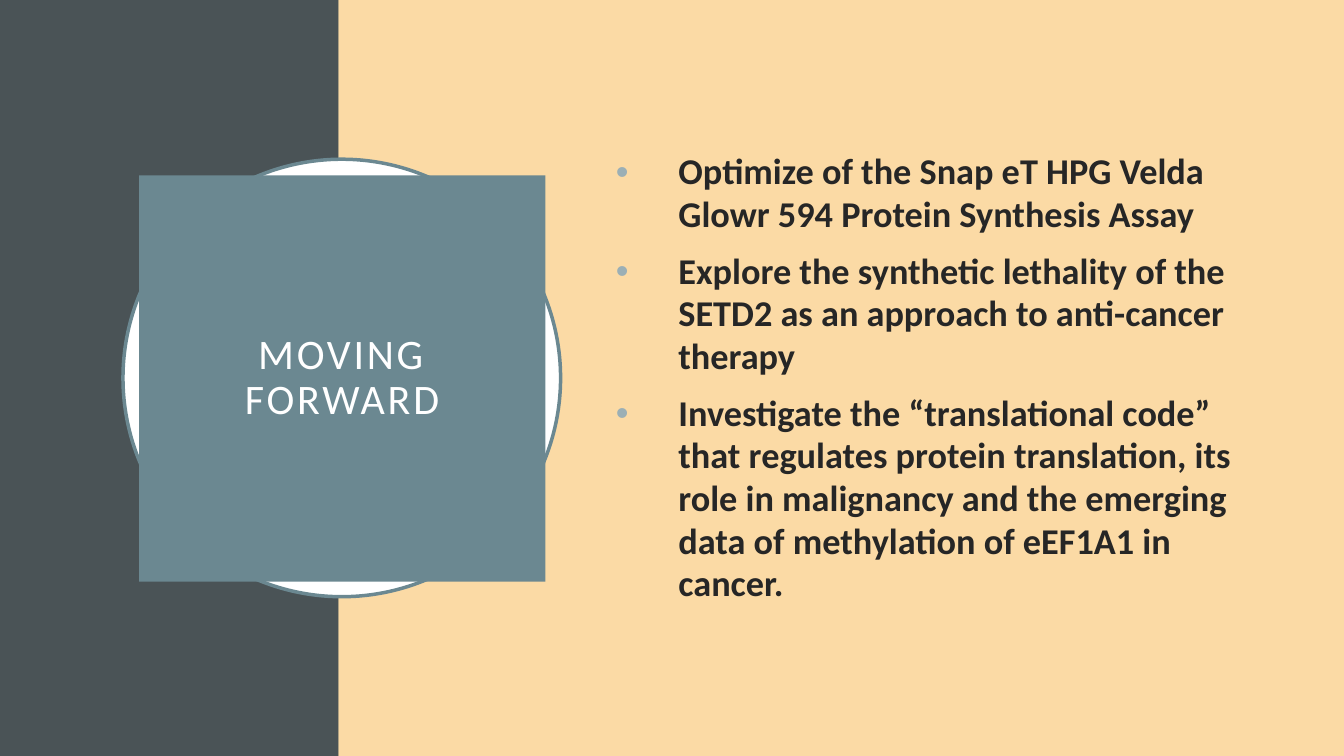
import pptx
import pptx.util
import pptx.dml.color
import pptx.enum.shapes
import pptx.enum.text
from dataclasses import dataclass
from lxml import etree
from pptx.oxml.ns import qn

Inches = pptx.util.Inches
Pt = pptx.util.Pt
Shape = pptx.enum.shapes.MSO_SHAPE
Align = pptx.enum.text.PP_ALIGN
Anchor = pptx.enum.text.MSO_ANCHOR


@dataclass(frozen=True)
class Theme:
    dark: str = "4A5356"
    sand: str = "FBDAA5"
    teal: str = "6B8891"
    dot: str = "9BAFB5"
    white: str = "FFFFFF"
    ink: str = "262626"
    font: str = "Calibri"
    head: float = 30
    body: float = 25.9


def color(code):
    return pptx.dml.color.RGBColor.from_string(code)


class Deck:
    def __init__(self, theme):
        self.theme = theme
        self.show = pptx.Presentation()
        self.show.slide_width = Inches(13.33)
        self.show.slide_height = Inches(7.5)
        self.slide = self.show.slides.add_slide(self.show.slide_layouts[5])
        self.paint(self.slide.background, theme.sand)

    def paint(self, item, code):
        item.fill.solid()
        item.fill.fore_color.rgb = color(code)

    def place(self, item, box):
        item.left, item.top, item.width, item.height = map(Inches, box)

    def shape(self, kind, box, fill, line=None):
        item = self.slide.shapes.add_shape(kind, *map(Inches, box))
        item.shadow.inherit = False
        self.paint(item, fill)
        if line:
            item.line.color.rgb = color(line)
            item.line.width = Pt(2.5)
        else:
            item.line.fill.background()

    def run(self, para, text, size, code, bold=False):
        run = para.add_run()
        run.text = text
        font = run.font
        font.name, font.size, font.bold = self.theme.font, Pt(size), bold
        font.color.rgb = color(code)
        return run

    def title(self, box, text):
        item = self.slide.shapes.title
        self.place(item, box)
        self.paint(item, self.theme.teal)
        # Bring the title in front of the disc
        self.slide.shapes._spTree.append(item._element)
        frame = item.text_frame
        frame.word_wrap = True
        frame.auto_size = pptx.enum.text.MSO_AUTO_SIZE.NONE
        frame.vertical_anchor = Anchor.MIDDLE
        frame.margin_left = frame.margin_right = Inches(0.6)
        para = frame.paragraphs[0]
        para.alignment = Align.CENTER
        para.line_spacing = 0.9
        run = self.run(para, text, self.theme.head, self.theme.white)
        run.font._element.set("spc", "200")

    def bullet(self, para, indent):
        props = para._p.get_or_add_pPr()
        props.set("marL", str(Inches(indent)))
        props.set("indent", str(-Inches(indent)))
        tint = etree.SubElement(props, qn("a:buClr"))
        etree.SubElement(tint, qn("a:srgbClr"), val=self.theme.dot)
        etree.SubElement(props, qn("a:buFont"), typeface="Arial")
        etree.SubElement(props, qn("a:buChar"), char="•")

    def bullets(self, box, lines):
        frame = self.slide.shapes.add_textbox(*map(Inches, box)).text_frame
        frame.word_wrap = True
        frame.vertical_anchor = Anchor.MIDDLE
        for index, line in enumerate(lines):
            para = frame.add_paragraph() if index else frame.paragraphs[0]
            para.space_before = Pt(10)
            para.line_spacing = 0.98
            self.bullet(para, 0.62)
            self.run(para, line, self.theme.body, self.theme.ink, True)


def main():
    theme = Theme()
    deck = Deck(theme)
    deck.shape(Shape.RECTANGLE, (0, 0, 3.36, 7.5), theme.dark)
    deck.shape(Shape.RECTANGLE, (3.36, 0, 9.97, 7.5), theme.sand)
    deck.shape(Shape.OVAL, (1.22, 1.58, 4.34, 4.34), theme.white, theme.teal)
    deck.title((1.38, 1.74, 4.03, 4.03), "MOVING FORWARD")
    deck.bullets((6.01, 1.15, 6.51, 5.2), [
        "Optimize of the Snap eT HPG Velda Glowr 594 Protein Synthesis Assay",
        "Explore the synthetic lethality of the SETD2 as an approach to "
        "anti-cancer therapy",
        "Investigate the “translational code” that regulates protein "
        "translation, its role in malignancy and the emerging data of "
        "methylation of eEF1A1 in cancer.",
    ])
    deck.show.save("out.pptx")


if __name__ == "__main__":
    main()
